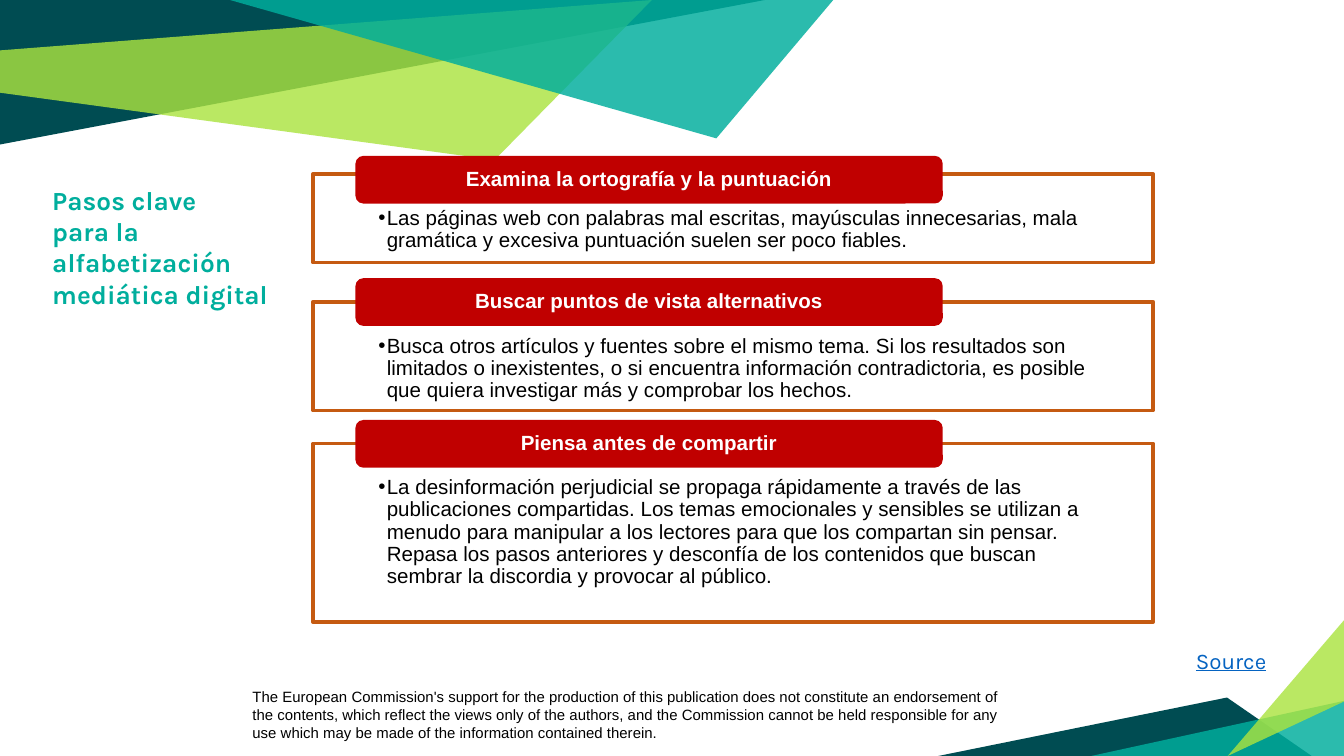
from lxml import etree
from pptx import Presentation
from pptx.dml.color import RGBColor
from pptx.enum.shapes import MSO_SHAPE
from pptx.enum.text import MSO_ANCHOR, MSO_AUTO_SIZE, PP_ALIGN
from pptx.oxml.ns import qn
from pptx.util import Inches, Pt

RECT, ROUNDED = MSO_SHAPE.RECTANGLE, MSO_SHAPE.ROUNDED_RECTANGLE
TOP, MIDDLE = MSO_ANCHOR.TOP, MSO_ANCHOR.MIDDLE
LEFT, CENTER = PP_ALIGN.LEFT, PP_ALIGN.CENTER
GROW = MSO_AUTO_SIZE.SHAPE_TO_FIT_TEXT

# Grid of square cells, a tenth of an inch each
COLUMNS, ROWS = 100, 56.25
CELL = Inches(0.1)


def color(hex_text):
    return RGBColor.from_string(hex_text)


class Page:
    """Style of the deck and the slide being filled."""
    body_font, display_font = "Arial", "Karla"
    dark, lime, teal = "004C52", "ABE33F", "00AE9D"
    red, orange, white, black, blue = "C00000", "C55A11", "FFFFFF", "000000", "0563C1"

    def __init__(self, deck):
        self.slide = deck.slides.add_slide(deck.slide_layouts[6])

    def grid(self, *cells):
        return [round(cell * CELL) for cell in cells]

    def paint(self, shape, fill, opacity=100, line=None):
        shape.shadow.inherit = False
        shape.fill.solid()
        shape.fill.fore_color.rgb = color(fill)
        if opacity < 100:
            rgb = shape.fill._xPr.find(qn("a:solidFill"))[0]
            etree.SubElement(rgb, qn("a:alpha"), val=str(opacity * 1000))
        if line:
            shape.line.color.rgb = color(line)
            shape.line.width = Pt(2)
        else:
            shape.line.fill.background()

    def style(self, para, font, size, ink, bold=False, underline=False):
        para.font.name = font
        para.font.size = Pt(size)
        para.font.color.rgb = color(ink)
        para.font.bold = bold
        para.font.underline = underline

    def bullet(self, para, indent):
        props = para._p.get_or_add_pPr()
        props.set("marL", str(indent))
        props.set("indent", str(-indent))
        ink = etree.SubElement(props, qn("a:buClr"))
        etree.SubElement(ink, qn("a:srgbClr"), val=self.black)
        etree.SubElement(props, qn("a:buFont"), typeface=self.body_font)
        etree.SubElement(props, qn("a:buChar"), char="•")

    def facet(self, points, fill, opacity=100):
        start, *others = [self.grid(*point) for point in points]
        builder = self.slide.shapes.build_freeform(*start, scale=1.0)
        builder.add_line_segments(others, close=True)
        self.paint(builder.convert_to_shape(), fill, opacity)

    def text(self, area, lines, font, size, ink, wrap=True, **marks):
        box = self.slide.shapes.add_textbox(*self.grid(*area))
        frame = box.text_frame
        frame.word_wrap = wrap
        frame.auto_size = GROW
        frame.text = "\n".join(lines)
        for para in frame.paragraphs:
            self.style(para, font, size, ink, **marks)

    def panel(self, kind, area, words, margins, anchor, align):
        """A preset shape holding one paragraph."""
        box = self.slide.shapes.add_shape(kind, *self.grid(*area))
        frame = box.text_frame
        frame.word_wrap = True
        frame.vertical_anchor = anchor
        (frame.margin_left, frame.margin_top,
         frame.margin_right, frame.margin_bottom) = self.grid(*margins)
        para = frame.paragraphs[0]
        para.text = words
        para.alignment = align
        para.line_spacing = 0.9
        return box, para

    def step(self, top, height, tab_top, heading, advice):
        # Outlined panel with a bulleted paragraph
        box, para = self.panel(RECT, (23.3, top, 62.5, height), advice,
                               (4.85, 2.5, 4.6, 0.9), TOP, LEFT)
        self.paint(box, self.white, 90, self.orange)
        self.bullet(para, self.grid(0.63)[0])
        self.style(para, self.body_font, 11, self.black)
        # Heading tab over the panel's upper edge
        tab, para = self.panel(ROUNDED, (26.45, tab_top, 43.7, 3.55), heading,
                               (1.9, 0, 1.9, 0), MIDDLE, CENTER)
        self.paint(tab, self.red)
        self.style(para, self.body_font, 11, self.white, bold=True)


def main():
    deck = Presentation()
    deck.slide_width, deck.slide_height = round(COLUMNS * CELL), round(ROWS * CELL)
    page = Page(deck)

    # Disclaimer
    page.text((17.8, 50.7, 57.9, 5), [
        "The European Commission's support for the production of this publication "
        "does not constitute an endorsement of the contents, which reflect the views "
        "only of the authors, and the Commission cannot be held responsible for any "
        "use which may be made of the information contained therein."],
        page.body_font, 8, page.black)

    # Facets in the upper left and lower right corners
    page.facet([(0, 0), (0, 10.75), (56.9, 0)], page.dark)
    page.facet([(0, 3.75), (0, 6.9), (36.8, 11.9), (48.5, 0)], page.lime, 81)
    page.facet([(69.8, ROWS), (97.6, ROWS), (91.3, 51.9)], page.dark)
    page.facet([(COLUMNS, 52.15), (COLUMNS, ROWS), (81.2, ROWS)], page.teal, 83)
    page.facet([(COLUMNS, 52.2), (COLUMNS, 46.15), (91.35, ROWS)], page.lime, 81)
    page.facet([(17.1, 0), (53.3, 10.3), (62, 0)], page.teal, 83)

    # Steps: panel top, panel height, tab top, heading, advice
    steps = [
        (12.95, 6.6, 11.6, "Examina la ortografía y la puntuación",
         "Las páginas web con palabras mal escritas, mayúsculas innecesarias, mala "
         "gramática y excesiva puntuación suelen ser poco fiables."),
        (22.45, 8.1, 20.7, "Buscar puntos de vista alternativos",
         "Busca otros artículos y fuentes sobre el mismo tema. Si los resultados son "
         "limitados o inexistentes, o si encuentra información contradictoria, es "
         "posible que quiera investigar más y comprobar los hechos."),
        (33, 13.3, 31.25, "Piensa antes de compartir",
         "La desinformación perjudicial se propaga rápidamente a través de las "
         "publicaciones compartidas. Los temas emocionales y sensibles se utilizan a "
         "menudo para manipular a los lectores para que los compartan sin pensar. "
         "Repasa los pasos anteriores y desconfía de los contenidos que buscan "
         "sembrar la discordia y provocar al público."),
    ]
    for step in steps:
        page.step(*step)

    # Title and source label
    page.text((2.9, 13.2, 18.2, 10.4),
              ["Pasos clave", "para la alfabetización mediática digital"],
              page.display_font, 14, page.teal, bold=True)
    page.text((88, 47.65, 7.3, 3), ["Source"], page.display_font, 12, page.blue,
              wrap=False, underline=True)

    deck.save("out.pptx")


if __name__ == "__main__":
    main()
